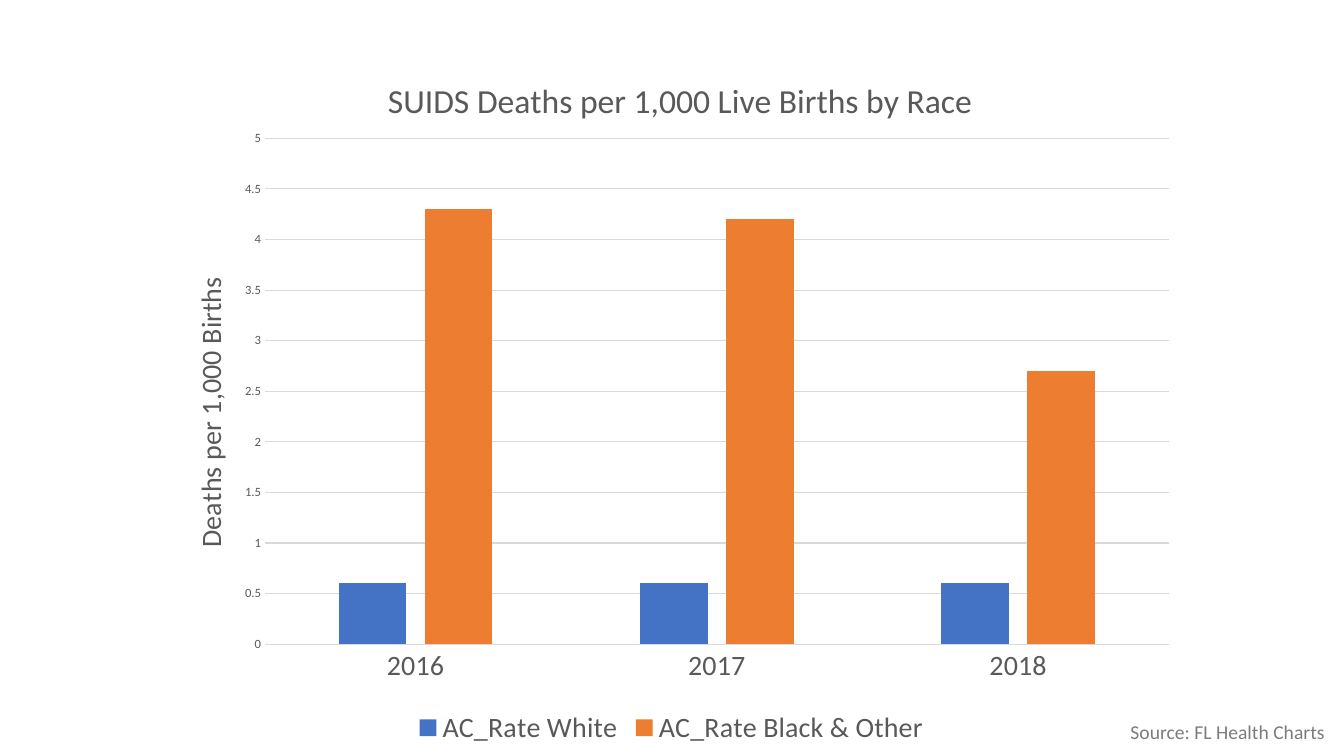
"""Build a slide with a clustered column chart of SUIDS death rates by race."""
from dataclasses import dataclass

from lxml import etree
from pptx import Presentation
from pptx import util as u
from pptx.chart import data
from pptx.dml.color import RGBColor
from pptx.enum import chart as charts, text
from pptx.oxml import ns


@dataclass(frozen=True)
class Theme:
    font: str = "Calibri"
    ink: str = "595959"
    source_ink: str = "7C7C7C"
    line: str = "D9D9D9"
    title_size: int = 24
    label_size: int = 20
    source_size: int = 14
    tick_size: int = 9
    line_width: float = 0.75


@dataclass(frozen=True)
class RateSeries:
    name: str
    rates: tuple[float, ...]
    color: str


THEME = Theme()
YEARS = ("2016", "2017", "2018")
SERIES = (
    RateSeries("AC_Rate White", (0.6, 0.6, 0.6), "4472C4"),
    RateSeries("AC_Rate Black & Other", (4.3, 4.2, 2.7), "ED7D31"),
)


def style_font(font, size: int, color: str = THEME.ink) -> None:
    font.name = THEME.font
    font.size = u.Pt(size)
    font.bold = False
    font.color.rgb = RGBColor.from_string(color)


def style_line(line) -> None:
    line.color.rgb = RGBColor.from_string(THEME.line)
    line.width = u.Pt(THEME.line_width)


def place(element, index: int, **fractions: float) -> None:
    """Give a chart part a manual layout in fractions of the chart."""
    for old in element.findall(ns.qn("c:layout")):
        element.remove(old)
    layout = etree.Element(ns.qn("c:layout"))
    manual = etree.SubElement(layout, ns.qn("c:manualLayout"))
    settings = {"xMode": "edge", "yMode": "edge", **fractions}
    if "w" in fractions:
        settings = {"layoutTarget": "inner", **settings}
    for name, value in settings.items():
        etree.SubElement(manual, ns.qn(f"c:{name}")).set("val", str(value))
    element.insert(index, layout)


def write_title(title, words: str, size: int, x: float, y: float) -> None:
    title.text_frame.text = words
    style_font(title.text_frame.paragraphs[0].font, size)
    place(title._element, 1, x=x, y=y)


def style_axes(chart) -> None:
    years, rates = chart.category_axis, chart.value_axis
    for axis, size in ((years, THEME.label_size), (rates, THEME.tick_size)):
        axis.major_tick_mark = charts.XL_TICK_MARK.NONE
        axis.minor_tick_mark = charts.XL_TICK_MARK.NONE
        style_font(axis.tick_labels.font, size)
    style_line(years.format.line)
    rates.format.line.fill.background()
    rates.minimum_scale, rates.maximum_scale, rates.major_unit = 0, 5, 0.5
    rates.tick_labels.number_format = "General"
    rates.tick_labels.number_format_is_linked = False
    style_line(rates.major_gridlines.format.line)
    write_title(rates.axis_title, "Deaths per 1,000 Births", THEME.label_size, 0.03, 0.33)


def add_rate_chart(slide) -> None:
    chart_data = data.CategoryChartData()
    chart_data.categories = YEARS
    for series in SERIES:
        chart_data.add_series(series.name, series.rates)
    chart = slide.shapes.add_chart(
        charts.XL_CHART_TYPE.COLUMN_CLUSTERED,
        u.Cm(3.89), u.Cm(0.91), u.Cm(26.06), u.Cm(18.01), chart_data,
    ).chart
    style_font(chart.font, THEME.label_size)
    write_title(
        chart.chart_title, "SUIDS Deaths per 1,000 Live Births by Race",
        THEME.title_size, 0.22, 0.05,
    )
    style_axes(chart)
    plot = chart.plots[0]
    plot.gap_width, plot.overlap = 219, -27
    plot.vary_by_categories = False
    for column, series in zip(plot.series, SERIES):
        column.format.fill.solid()
        column.format.fill.fore_color.rgb = RGBColor.from_string(series.color)
    chart.has_legend = True
    chart.legend.position = charts.XL_LEGEND_POSITION.BOTTOM
    chart.legend.include_in_layout = False
    style_font(chart.legend.font, THEME.label_size)
    plot_area = chart._chartSpace.find(f".//{ns.qn('c:plotArea')}")
    place(plot_area, 0, x=0.107, y=0.143, w=0.874, h=0.708)


def add_source(slide) -> None:
    shape = slide.shapes.add_textbox(u.Cm(28.24), u.Cm(18.01), u.Cm(5.61), u.Cm(1.45))
    frame = shape.text_frame
    frame.word_wrap = True
    frame.auto_size = text.MSO_AUTO_SIZE.SHAPE_TO_FIT_TEXT
    frame.text = "Source: FL Health Charts"
    style_font(frame.paragraphs[0].font, THEME.source_size, THEME.source_ink)


def main() -> None:
    presentation = Presentation()
    presentation.slide_width, presentation.slide_height = u.Cm(33.87), u.Cm(19.05)
    slide = presentation.slides.add_slide(presentation.slide_layouts[6])
    add_rate_chart(slide)
    add_source(slide)
    presentation.save("out.pptx")


if __name__ == "__main__":
    main()
